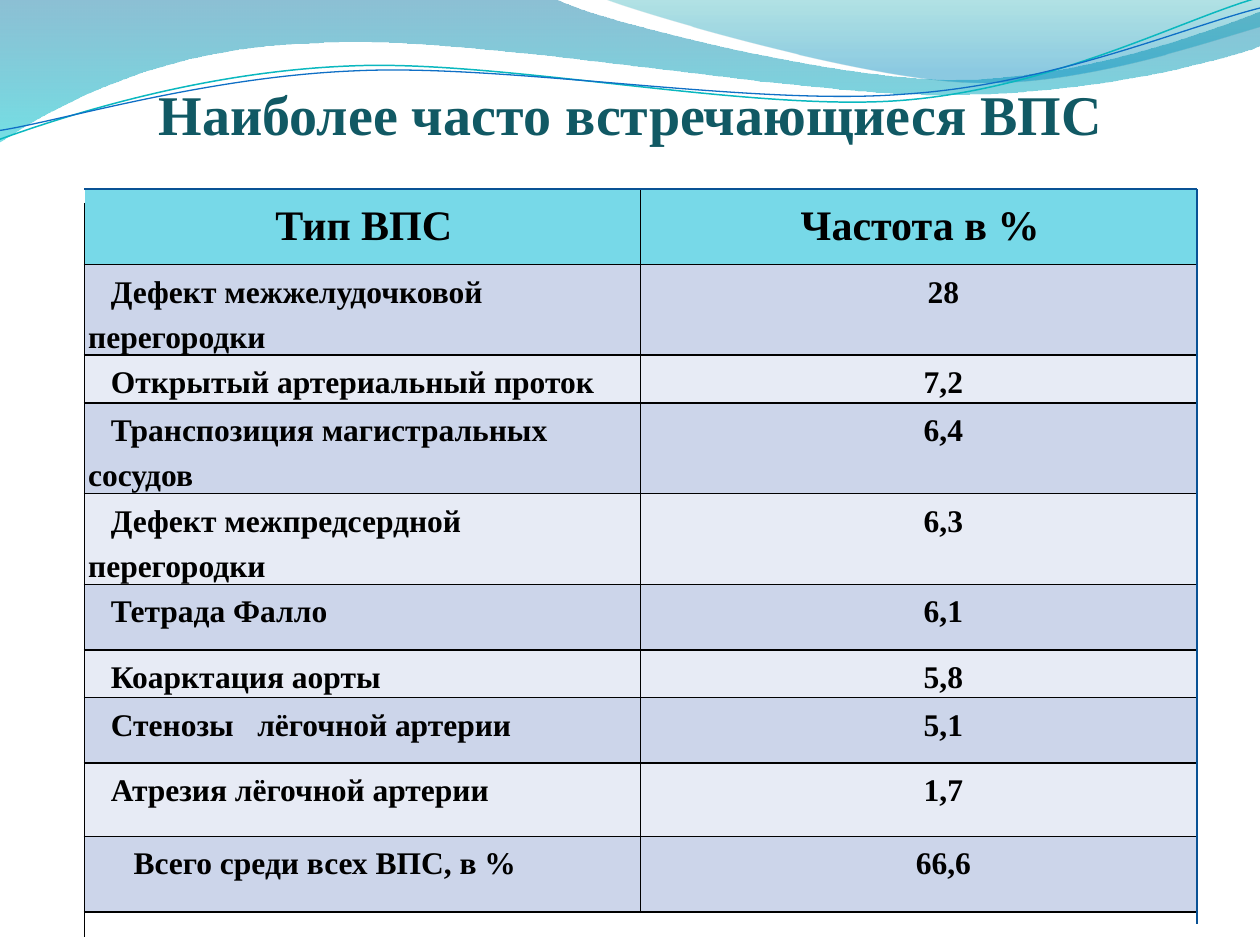
from dataclasses import dataclass

from lxml.etree import SubElement
from pptx import Presentation
from pptx.dml.color import RGBColor
from pptx.enum.shapes import MSO_CONNECTOR
from pptx.enum.text import MSO_ANCHOR, MSO_AUTO_SIZE, PP_ALIGN
from pptx.oxml import parse_xml
from pptx.oxml.ns import nsdecls, qn
from pptx.util import Pt

PX = 9144  # EMU in one px, 100 px to the inch


@dataclass(frozen=True)
class Theme:
    font: str = "Times New Roman"
    title_size: int = 32
    header_size: int = 24
    body_size: int = 18
    title: str = "115964"
    ink: str = "000000"
    paper: str = "FFFFFF"
    header: str = "77D9E8"
    bands: tuple = ("CCD5EA", "E7EBF5")
    frame: str = "095295"


theme = Theme()


def write(frame, text, size, color=theme.ink, align=PP_ALIGN.LEFT,
          left=0, indent=0, spacing=None):
    para = frame.paragraphs[0]
    para.alignment = align
    para.line_spacing = spacing
    properties = para._p.get_or_add_pPr()
    properties.set("marL", str(left * PX))
    properties.set("indent", str(indent * PX))
    span = para.add_run()
    span.text = text
    span.font.name = theme.font
    span.font.size = Pt(size)
    span.font.bold = True
    span.font.color.rgb = RGBColor.from_string(color)


def draw_outline(start, segments, closed):
    """Draw lines (one point) and cubic curves (three points) as one freeform."""
    builder = page.shapes.build_freeform(*start, scale=PX)
    builder.add_line_segments([point for segment in segments for point in segment], close=closed)
    shape = builder.convert_to_shape()
    shape.shadow.inherit = False
    # The builder knows straight lines only: gather each three into one curve
    lines = iter(list(shape._element.iter(qn("a:lnTo"))))
    for segment in segments:
        group = [next(lines) for _ in segment]
        if len(group) == 3:
            curve = SubElement(group[0].getparent(), qn("a:cubicBezTo"))
            group[0].addprevious(curve)
            for line in group:
                curve.append(line[0])
                line.getparent().remove(line)
    return shape


deck = Presentation()
deck.slide_width, deck.slide_height = 1000 * PX, 750 * PX
page = deck.slides.add_slide(deck.slide_layouts[5])

# Waves along the top: outline and gradient stops (position, colour, opacity in %)
waves = [
    ((0, 0),
     [[(440, -1)],
      [(476, 17), (664, 63), (758, 63)],
      [(853, 63), (958, 26), (1000, 9)],
      [(1001, 36)],
      [(983, 44), (870, 76), (746, 75)],
      [(622, 75), (382, 28), (257, 34)],
      [(129, 36), (46, 83), (-1, 113)],
      [(0, 0)]],
     [(0, "0074A1", 45), (100, "00C6CF", 55)]),
    ((479, -1),
     [[(509, 11), (682, 62), (769, 65)],
      [(856, 69), (961, 32), (1000, 21)],
      [(1000, 0)],
      [(479, -1)]],
     [(0, "00A1A9", 30), (80, "008BBF", 45)]),
]
for start, segments, stops in waves:
    wave = draw_outline(start, segments, closed=True)
    wave.line.fill.background()
    wave.fill.gradient()
    wave.fill.gradient_angle = 270
    for stop, (position, color, opacity) in zip(wave.fill.gradient_stops, stops):
        stop.position = position / 100
        stop.color.rgb = RGBColor.from_string(color)
        stop._gs[0].append(parse_xml(f'<a:alpha {nsdecls("a")} val="{opacity * 1000}"/>'))

# Ripples, tilted as a whole
ripples = [
    ((-2, 87),
     [[(47, 72), (158, 41), (278, 42)],
      [(396, 42), (591, 93), (712, 90)],
      [(832, 87), (940, 36), (1000, 22)]], "0AB8BF", 0.85),
    ((-2, 80),
     [[(46, 75), (164, 45), (283, 46)],
      [(403, 46), (596, 89), (716, 85)],
      [(835, 83), (942, 42), (1002, 30)]], "0F6FC6", 0.75),
]
for start, segments, color, width in ripples:
    ripple = draw_outline(start, segments, closed=False)
    ripple.rotation = 357.3
    ripple.fill.background()
    ripple.line.color.rgb = RGBColor.from_string(color)
    ripple.line.width = Pt(width)

# Title, in front of the waves
title = page.shapes.title
page.shapes._spTree.append(title._element)
title.left, title.top, title.width, title.height = (n * PX for n in (42, 58, 917, 471))
title.text_frame.word_wrap = True
title.text_frame.auto_size = MSO_AUTO_SIZE.NONE
title.text_frame.vertical_anchor = MSO_ANCHOR.TOP
write(title.text_frame, "Наиболее часто встречающиеся ВПС", theme.title_size,
      color=theme.title, align=PP_ALIGN.CENTER)

# Table: least row height, type of defect, frequency
rows = [
    (60, "Тип ВПС", "Частота в %"),
    (48, "Дефект межжелудочковой перегородки", "28"),
    (38, "Открытый артериальный проток", "7,2"),
    (6, "Транспозиция магистральных сосудов", "6,4"),
    (38, "Дефект межпредсердной перегородки", "6,3"),
    (52, "Тетрада Фалло", "6,1"),
    (38, "Коарктация аорты", "5,8"),
    (52, "Стенозы   лёгочной артерии", "5,1"),
    (58, "Атрезия лёгочной артерии", "1,7"),
    (60, "Всего среди всех ВПС, в %", "66,6"),
]
left, top, right, bottom = 67, 150, 950, 744
table_frame = page.shapes.add_table(len(rows), 2, left * PX, top * PX,
                                    (right - left) * PX, (bottom - top) * PX)
table = table_frame.table
for column in table.columns:
    column.width = (right - left) * PX // 2

for r, (height, *texts) in enumerate(rows):
    table.rows[r].height = height * PX
    is_header, is_total = r == 0, r == len(rows) - 1
    for c, text in enumerate(texts):
        cell = table.cell(r, c)
        cell.margin_left = cell.margin_right = cell.margin_top = cell.margin_bottom = 0
        cell.fill.solid()
        fill = theme.header if is_header else theme.bands[(r - 1) % 2]
        cell.fill.fore_color.rgb = RGBColor.from_string(fill)
        write(cell.text_frame, text,
              theme.header_size if is_header else theme.body_size,
              align=PP_ALIGN.CENTER if is_header or c == 1 else PP_ALIGN.LEFT,
              left=3, indent=-1 if is_header else 36 if is_total or c == 1 else 18,
              spacing=1.3)
        outer_sides = {"L": c == 0, "R": c == 1, "T": is_header, "B": False}
        for position, (side, is_outer) in enumerate(outer_sides.items()):
            color = theme.paper if is_outer else theme.ink
            cell._tc.get_or_add_tcPr().insert(position, parse_xml(
                f'<a:ln{side} {nsdecls("a")} w="12700"><a:solidFill>'
                f'<a:srgbClr val="{color}"/></a:solidFill></a:ln{side}>'))
table_frame.height = (bottom - top) * PX

# Lines along the table's edges
edges = [
    (left, 161, left, bottom, theme.ink),
    (right, top, right, 733, theme.frame),
    (left, top, right, top, theme.frame),
]
for *ends, color in edges:
    edge = page.shapes.add_connector(MSO_CONNECTOR.STRAIGHT, *(n * PX for n in ends))
    edge.line.color.rgb = RGBColor.from_string(color)
    edge.line.width = Pt(0.75)
    edge._element.spPr.append(parse_xml(f'<a:effectLst {nsdecls("a")}/>'))

deck.save("out.pptx")
